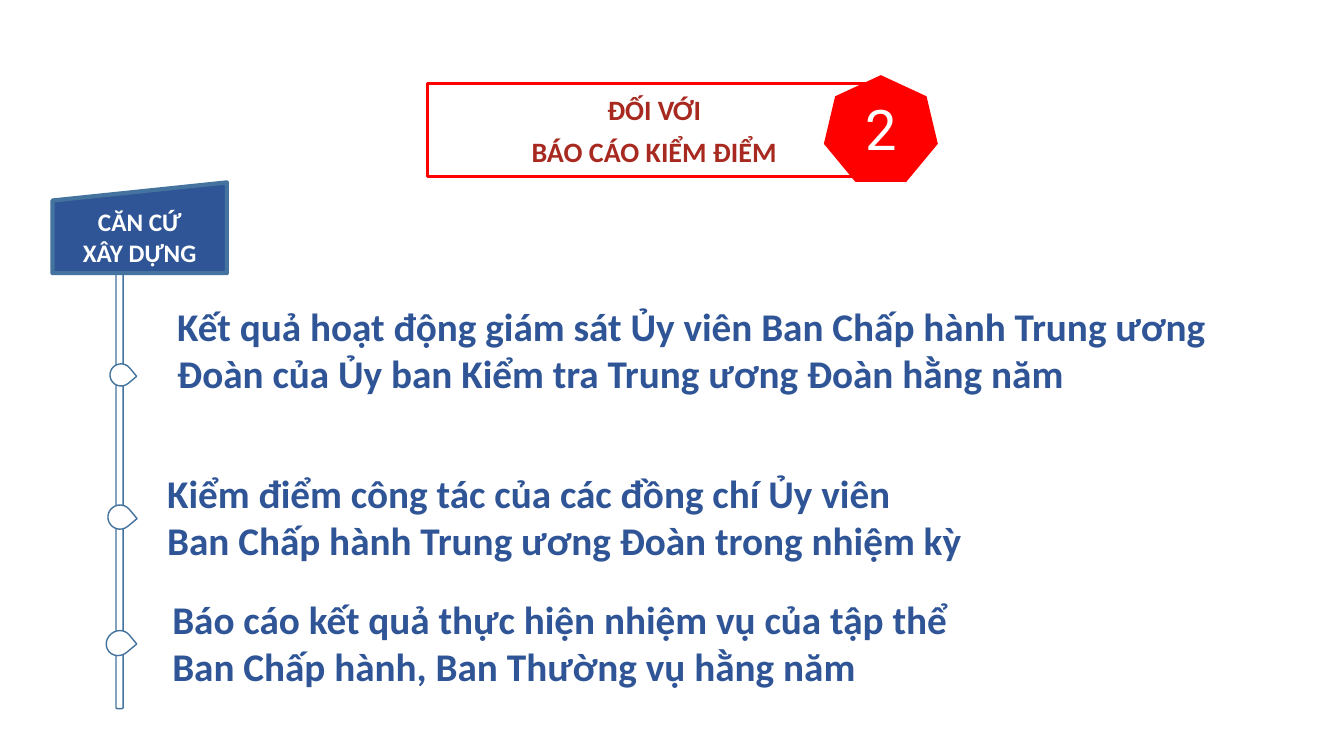
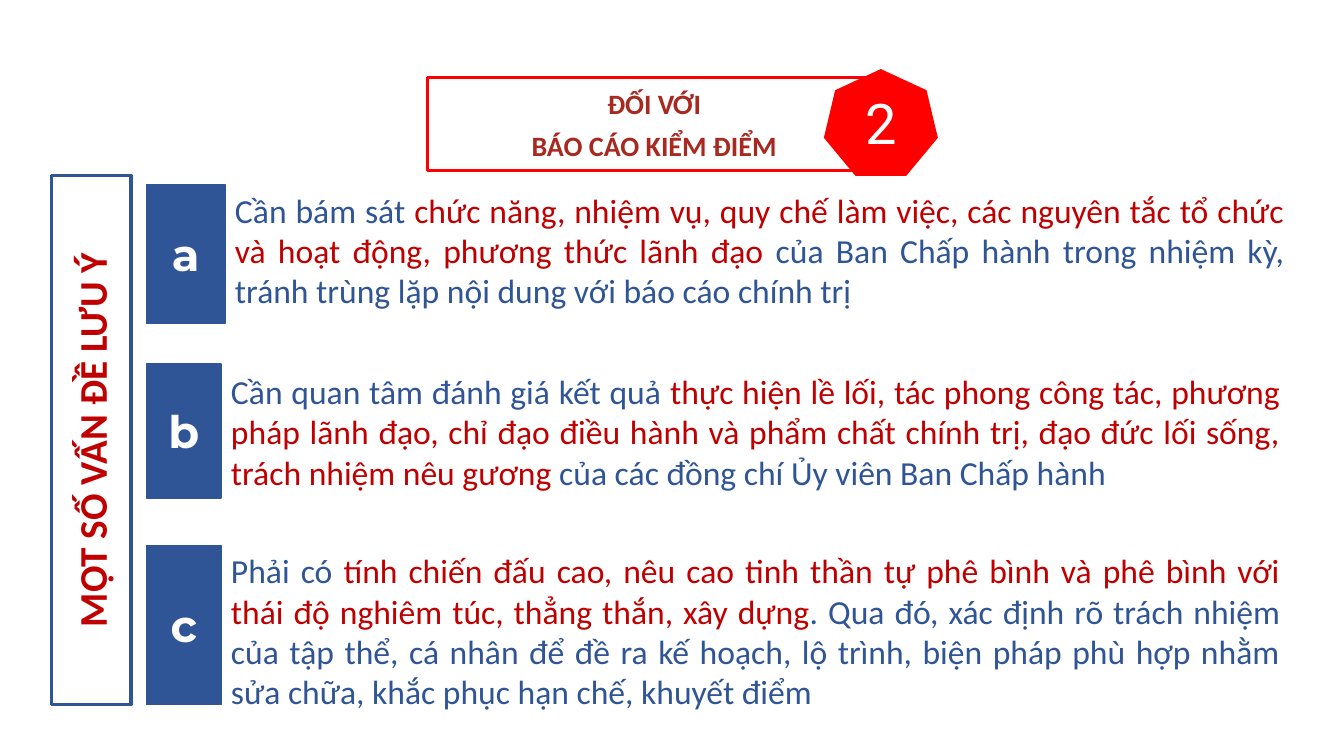
from pptx import Presentation
from pptx.dml.color import RGBColor
from pptx.enum.shapes import MSO_SHAPE as SHAPE
from pptx.enum.text import MSO_ANCHOR as ANCHOR, MSO_AUTO_SIZE as AUTO, PP_ALIGN as ALIGN
from pptx.util import Inches, Pt

WHITE, RED, BLUE = "FFFFFF", "FF0000", "2F5597"
STEEL, BRICK, CRIMSON = "43739E", "A7291F", "C00000"


def rgb(code):
    return RGBColor.from_string(code)


class Deck:
    """Holds the style and the current slide; lengths are percent of the slide."""

    font, number_font, letter_font = "Calibri", "Roboto", "Montserrat"

    def __init__(self):
        self.prs = Presentation()
        self.prs.slide_width, self.prs.slide_height = Inches(13.33), Inches(7.5)
        self.s = None

    def box(self, x, y, w, h):
        sw, sh = self.prs.slide_width, self.prs.slide_height
        return [int(v * size / 100) for v, size in ((x, sw), (y, sh), (w, sw), (h, sh))]

    def paint(self, sp, fill, line, weight):
        if fill:
            sp.fill.solid()
            sp.fill.fore_color.rgb = rgb(fill)
        else:
            sp.fill.background()
        if line:
            sp.line.color.rgb = rgb(line)
            sp.line.width = Pt(weight)
        else:
            sp.line.fill.background()

    def set_text(self, sp, paragraphs, size, font=None, bold=False,
                 align=ALIGN.CENTER, anchor=ANCHOR.MIDDLE, gap=0):
        """Each paragraph is a list of (text, colour) runs."""
        tf = sp.text_frame
        tf.word_wrap, tf.auto_size, tf.vertical_anchor = True, AUTO.NONE, anchor
        for i, runs in enumerate(paragraphs):
            p = tf.add_paragraph() if i else tf.paragraphs[0]
            p.alignment = align
            p.space_before = Pt(gap if i else 0)
            for text, color in runs:
                r = p.add_run()
                r.text = text
                r.font.name, r.font.size, r.font.bold = font or self.font, Pt(size), bold
                r.font.color.rgb = rgb(color)

    def shape(self, kind, place, fill=None, line=None, weight=1, turn=0):
        sp = self.s.shapes.add_shape(kind, *self.box(*place))
        sp.shadow.inherit = False
        sp.rotation = turn
        self.paint(sp, fill, line, weight)
        return sp

    def text(self, place, paragraphs, size, bold=False, align=ALIGN.LEFT):
        sp = self.s.shapes.add_textbox(*self.box(*place))
        self.set_text(sp, paragraphs, size, bold=bold, align=align, anchor=ANCHOR.TOP)

    def slide(self, lines, number, top):
        """New slide with the framed title and its numbered badge."""
        self.s = self.prs.slides.add_slide(self.prs.slide_layouts[5])
        title = self.s.shapes.title
        title.left, title.top, title.width, title.height = self.box(31.8, top, 33.75, 12.27)
        self.paint(title, WHITE, RED, 2.25)
        self.set_text(title, [[(t, BRICK)] for t in lines], 20, bold=True, gap=6)
        badge = self.shape(SHAPE.HEPTAGON, (61.3, top - 1.13, 8.48, 14.13), RED)
        self.set_text(badge, [[(number, WHITE)]], 40, self.number_font)

    def sign(self, place, lines):
        sp = self.shape(SHAPE.FLOWCHART_MANUAL_INPUT, place, BLUE, STEEL, 3)
        self.set_text(sp, [[(t, WHITE)] for t in lines], 18, bold=True)

    def side_label(self, place, text):
        sp = self.shape(SHAPE.RECTANGLE, place, line=BLUE, weight=2.25, turn=270)
        self.set_text(sp, [[(text, CRIMSON)]], 28, bold=True)

    def tile(self, place, letter):
        sp = self.shape(SHAPE.RECTANGLE, place, BLUE, BLUE)
        self.set_text(sp, [[(letter, WHITE)]], 32, self.letter_font, bold=True)


def main():
    d = Deck()
    heading = ["ĐỐI VỚI", "BÁO CÁO KIỂM ĐIỂM"]

    # Slide 1: signpost with three grounds
    d.slide(heading, "2", 11.07)
    d.shape(SHAPE.ROUNDED_RECTANGLE, (8.63, 36.13, 0.53, 57.6), WHITE, STEEL)
    d.sign((3.9, 24.13, 12.98, 12), ["CĂN CỨ", "XÂY DỰNG"])
    right = 94.75
    grounds = [
        # text left and top, marker place, lines
        (12.45, 39.33, (8.18, 48.13, 1.65, 2.93),
         ["Kết quả hoạt động giám sát Ủy viên Ban Chấp hành Trung ương "
          "Đoàn của Ủy ban Kiểm tra Trung ương Đoàn hằng năm"]),
        (11.7, 61.47, (8.03, 66.8, 1.8, 3.2),
         ["Kiểm điểm công tác của các đồng chí Ủy viên",
          "Ban Chấp hành Trung ương Đoàn trong nhiệm kỳ"]),
        (12.08, 78.13, (7.95, 83.33, 1.8, 3.47),
         ["Báo cáo kết quả thực hiện nhiệm vụ của tập thể",
          "Ban Chấp hành, Ban Thường vụ hằng năm"]),
    ]
    for left, top, marker, lines in grounds:
        d.text((left, top, right - left, 13.87), [[(t, BLUE)] for t in lines], 28, bold=True)
        d.shape(SHAPE.TEAR, marker, WHITE, STEEL, turn=50.2)

    # Slide 2: three lettered notes beside a vertical label
    d.slide(heading, "2", 10.27)
    d.side_label((-12.9, 52.93, 39.38, 10.53), "MỘT SỐ VẤN ĐỀ LƯU Ý")
    notes = [
        # letter, tile top, width and height, text top, runs
        ("a", 24.4, 5.85, 18.4, 24.4,
         ["Cần bám sát ",
          "chức năng, nhiệm vụ, quy chế làm việc, các nguyên tắc tổ chức "
          "và hoạt động, phương thức lãnh đạo",
          " của Ban Chấp hành trong nhiệm kỳ, tránh trùng lặp nội dung "
          "với báo cáo chính trị"]),
        ("b", 48.13, 5.55, 17.73, 48.4,
         ["Cần quan tâm đánh giá kết quả ",
          "thực hiện lề lối, tác phong công tác, phương pháp lãnh đạo, "
          "chỉ đạo điều hành và phẩm chất chính trị, đạo đức lối sống, "
          "trách nhiệm nêu gương ",
          "của các đồng chí Ủy viên Ban Chấp hành"]),
        ("c", 72.13, 5.55, 21.07, 72.13,
         ["Phải có ",
          "tính chiến đấu cao, nêu cao tinh thần tự phê bình và phê bình "
          "với thái độ nghiêm túc, thẳng thắn, xây dựng",
          ". Qua đó, xác định rõ trách nhiệm của tập thể, cá nhân để đề ra "
          "kế hoạch, lộ trình, biện pháp phù hợp nhằm sửa chữa, khắc phục "
          "hạn chế, khuyết điểm"]),
    ]
    tile_left = 10.9
    for letter, top, width, height, text_top, parts in notes:
        runs = list(zip(parts, (BLUE, CRIMSON, BLUE)))
        d.text((tile_left + width, text_top, 79.55, height), [runs], 24, align=ALIGN.JUSTIFY)
        d.tile((tile_left, top, width, height), letter)

    d.prs.save("out.pptx")


if __name__ == "__main__":
    main()
